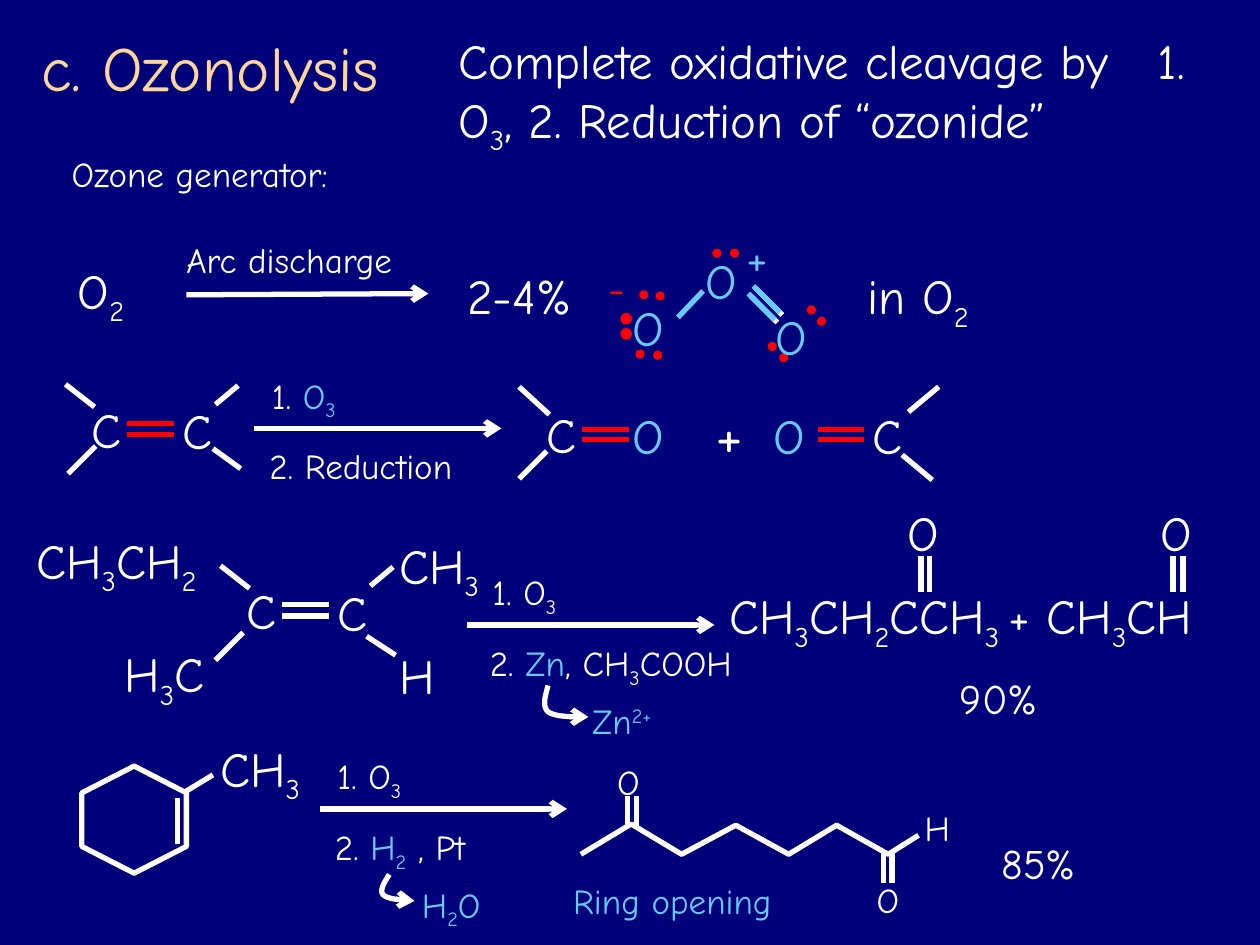
from pptx import Presentation
from pptx.dml.color import RGBColor
from pptx.enum.shapes import MSO_CONNECTOR, MSO_SHAPE
from pptx.enum.text import MSO_AUTO_SIZE
from pptx.oxml.ns import qn
from pptx.util import Inches, Pt
from lxml.etree import SubElement

NAVY = RGBColor(0x00, 0x00, 0x7A)
WHITE = RGBColor(0xFF, 0xFF, 0xFF)
PEACH = RGBColor(0xFF, 0xD6, 0x99)
SKY = RGBColor(0x66, 0xCC, 0xFF)
RED = RGBColor(0xFF, 0x00, 0x00)
FONT = "Comic Neue"

# Labels: left, top, width, size, colour, text; an underscore toggles sub/superscript
LABELS = [
    (0.23, 0.18, 3.58, 36, PEACH, "c. Ozonolysis"),
    (0.52, 2.02, 1.04, 28, WHITE, "O_2"),
    (1.38, 1.84, 2.21, 20, WHITE, "Arc discharge"),
    (3.61, 2.06, 1.2, 28, WHITE, "2-4%"),
    (6.79, 2.06, 1.4, 28, WHITE, "in O_2"),
    # Ozone
    (5.5, 1.94, 0.98, 28, SKY, "O"),
    (4.92, 2.31, 0.62, 28, SKY, "O"),
    (6.06, 2.38, 0.52, 28, SKY, "O"),
    (5.83, 1.75, 0.52, 28, SKY, "+"),
    # General cleavage
    (0.63, 3.12, 0.37, 28, WHITE, "C"),
    (1.35, 3.13, 0.37, 28, WHITE, "C"),
    (4.24, 3.16, 0.37, 28, WHITE, "C"),
    (4.92, 3.17, 0.5, 28, SKY, "O"),
    (5.58, 3.08, 0.69, 36, WHITE, "+"),
    (6.04, 3.17, 0.5, 28, SKY, "O"),
    (6.83, 3.17, 0.37, 28, WHITE, "C"),
    # Alkene to ketone and aldehyde
    (1.86, 4.56, 0.37, 28, WHITE, "C"),
    (2.58, 4.57, 0.37, 28, WHITE, "C"),
    (3.07, 4.2, 1.02, 28, WHITE, "CH_3"),
    (0.89, 5.06, 0.92, 28, WHITE, "H_3_C"),
    (3.07, 5.07, 0.57, 28, WHITE, "H"),
    (0.19, 4.16, 1.87, 28, WHITE, "CH_3_CH_2"),
    (4.6, 5.5, 0.88, 20, SKY, "Zn_2+"),
    (5.69, 4.6, 4.44, 28, WHITE, "CH_3_CH_2_CCH_3 _+ CH_3_CH"),
    (9.11, 3.94, 0.68, 28, WHITE, "O"),
    (7.1, 3.94, 0.68, 28, WHITE, "O"),
    (7.52, 5.29, 1.25, 24, WHITE, "90%"),
    # Ring opening
    (1.65, 5.81, 1.02, 28, WHITE, "CH_3"),
    (3.25, 6.96, 0.88, 20, SKY, "H_2_O"),
    (6.86, 6.92, 0.33, 20, WHITE, "O"),
    (4.8, 5.99, 0.33, 20, WHITE, "O"),
    (7.24, 6.35, 0.89, 20, WHITE, "H"),
    (4.45, 6.93, 2.42, 20, SKY, "Ring opening"),
    (7.85, 6.6, 1.21, 24, WHITE, "85%"),
]
TIGHT = [
    (4.73, 2.03, 0.34, 24, RED, "-"),
    (0.47, 1.16, 2.47, 20, WHITE, "Ozone generator:"),
]
HEAD = "Complete oxidative cleavage by\t1. O_3_, 2. Reduction of “ozonide”"

# Steps: arrow start, label indent, label width, text above, text below
STEPS = [
    (2.02, 3.4, 0.04, 1.85, [("1. ", WHITE), ("O_3", SKY)], [("2. Reduction", WHITE)]),
    (3.71, 4.96, 0.1, 2.56, [("1. O_3", WHITE)],
     [("2. ", WHITE), ("Zn", SKY), (", CH_3_COOH", WHITE)]),
    (2.54, 6.42, 0.04, 1.85, [("1. O_3", WHITE)],
     [("2. ", WHITE), ("H_2", SKY), (" , Pt", WHITE)]),
]

# Single bonds: x1, y1, x2, y2
BONDS = [
    (1.69, 3.56, 1.91, 3.72), (0.76, 3.54, 0.54, 3.76),
    (1.71, 3.21, 1.89, 3.06), (0.75, 3.23, 0.52, 3.05),
    (4.34, 3.58, 4.12, 3.8), (4.36, 3.29, 4.12, 3.07),
    (7.16, 3.61, 7.4, 3.81), (7.21, 3.27, 7.45, 3.07),
    (2.91, 5.05, 3.14, 5.2), (1.93, 5.02, 1.71, 5.24),
    (2.94, 4.65, 3.12, 4.5), (1.98, 4.67, 1.75, 4.49),
    (1.46, 6.29, 1.69, 6.15), (1.41, 6.33, 1.41, 6.7),
]
# Double bonds: start, length along x and y, gap to second line, colour
PAIRS = [
    (6, 2.29, 0.21, 0.21, -0.04, 0.06, WHITE),
    (5.98, 2.27, 0.21, 0.21, -0.04, 0.06, SKY),
    (1.01, 3.36, 0.37, 0, 0, 0.09, RED),
    (4.62, 3.41, 0.37, 0, 0, 0.08, RED),
    (6.49, 3.41, 0.37, 0, 0, 0.08, RED),
    (2.24, 4.8, 0.37, 0, 0, 0.09, WHITE),
    (9.31, 4.41, 0, 0.29, 0.08, 0, WHITE),
    (7.31, 4.41, 0, 0.29, 0.07, 0, WHITE),
    (7.01, 6.77, 0, 0.24, 0.07, 0, WHITE),
    (4.98, 6.32, 0, 0.24, 0.07, 0, WHITE),
]

# Lone-pair dots: centre and size
DOTS = [(x, y, 0.03) for x, y in [
    (6.52, 2.55), (6.44, 2.46), (5.24, 2.35), (5.11, 2.34), (5.22, 2.82),
    (5.08, 2.81), (6.22, 2.84), (6.13, 2.75), (5.83, 2.01), (5.69, 2.01),
]] + [(4.97, 2.53, 0.05), (4.97, 2.65, 0.05)]

CHAIN = [(4.61, 6.78), (5.01, 6.54), (5.41, 6.78), (5.84, 6.55),
         (6.26, 6.78), (6.64, 6.55), (7.05, 6.78), (7.29, 6.63)]
# Hooks: two joined cubic curves, seven points
HOOKS = [
    [(4.35, 5.44), (4.33, 5.52), (4.3, 5.6), (4.35, 5.65),
     (4.41, 5.69), (4.54, 5.69), (4.67, 5.69)],
    [(3.09, 6.94), (3.05, 7), (3.01, 7.07), (3.04, 7.1),
     (3.08, 7.14), (3.18, 7.14), (3.29, 7.15)],
]

deck = Presentation()
deck.slide_width, deck.slide_height = Inches(10), Inches(7.5)
slide = deck.slides.add_slide(deck.slide_layouts[6])
slide.background.fill.solid()
slide.background.fill.fore_color.rgb = NAVY
shapes = slide.shapes


def write(x, y, w, size, runs, wrap=True, rows=1):
    box = shapes.add_textbox(*map(Inches, (x, y, w, rows * size / 60 + 0.1)))
    frame = box.text_frame
    form = {"word_wrap": wrap, "auto_size": MSO_AUTO_SIZE.SHAPE_TO_FIT_TEXT}
    for key, val in form.items():
        setattr(frame, key, val)
    para = frame.paragraphs[0]
    for text, tint in runs:
        for i, bit in enumerate(text.split("_")):
            if not bit:
                continue
            run = para.add_run()
            run.text = bit
            for key, val in {"name": FONT, "size": Pt(size)}.items():
                setattr(run.font, key, val)
            run.font.color.rgb = tint
            if i % 2:
                base = 30000 if bit.endswith("+") else -25000
                run.font._element.set("baseline", str(base))
    return para


def ink(shape, tint=WHITE, arrow=False):
    shape.line.color.rgb = tint
    shape.line.width = Pt(3)
    if arrow:
        SubElement(shape.line._get_or_add_ln(), qn("a:tailEnd"), type="arrow")


def bond(x1, y1, x2, y2, tint=WHITE, arrow=False):
    line = shapes.add_connector(MSO_CONNECTOR.STRAIGHT, *map(Inches, (x1, y1, x2, y2)))
    ink(line, tint, arrow)
    SubElement(line._element.spPr, qn("a:effectLst"))


def trace(points, arrow=False):
    first, *rest = [(Inches(x), Inches(y)) for x, y in points]
    pen = shapes.build_freeform(*first)
    pen.add_line_segments(rest, close=False)
    shape = pen.convert_to_shape()
    shape.shadow.inherit = False
    shape.fill.background()
    ink(shape, WHITE, arrow)


def curve(four, count=10):
    for n in range(count + 1):
        t = n / count
        parts = ((1 - t) ** 3, 3 * t * (1 - t) ** 2, 3 * t * t * (1 - t), t ** 3)
        yield tuple(sum(p * pt[k] for p, pt in zip(parts, four)) for k in (0, 1))


# Bonds and dots
bond(5.58, 2.31, 5.38, 2.52, SKY)
for ends in BONDS:
    bond(*ends)
for x, y, dx, dy, gx, gy, tint in PAIRS:
    for n in (0, 1):
        left, top = x + n * gx, y + n * gy
        bond(left, top, left + dx, top + dy, tint)
for x, y, d in DOTS:
    dot = shapes.add_shape(MSO_SHAPE.OVAL, *map(Inches, (x - d / 2, y - d / 2, d, d)))
    dot.shadow.inherit = False
    dot.fill.solid()
    dot.fill.fore_color.rgb = SKY
    ink(dot, RED)

# Ring, chain and hooked arrows
ring = shapes.add_shape(MSO_SHAPE.HEXAGON, *map(Inches, (0.64, 6.09, 0.85, 0.83)))
ring.rotation = 270
ring.adjustments[0] = 0.256
ring.shadow.inherit = False
ring.fill.background()
ink(ring)
trace(CHAIN)
for hook in HOOKS:
    trace([*curve(hook[:4]), *list(curve(hook[3:]))[1:]], arrow=True)

# Text and reaction steps
for *spot, tint, text in LABELS:
    write(*spot, [(text, tint)])
for *spot, tint, text in TIGHT:
    write(*spot, [(text, tint)], wrap=False)
head = write(3.54, 0.19, 6.45, 28, [(HEAD, WHITE)], rows=2)
tabs = SubElement(head._p.get_or_add_pPr(), qn("a:tabLst"))
SubElement(tabs, qn("a:tab"), pos=str(Inches(5.55)), algn="l")

bond(1.48, 2.34, 3.4, 2.33, arrow=True)
for x, y, dent, wide, above, below in STEPS:
    bond(x, y, x + 1.96, y, arrow=True)
    write(x + dent, y - 0.48, 0.99, 20, above)
    write(x + dent - 0.02, y + 0.08, wide, 20, below)

deck.save("out.pptx")
